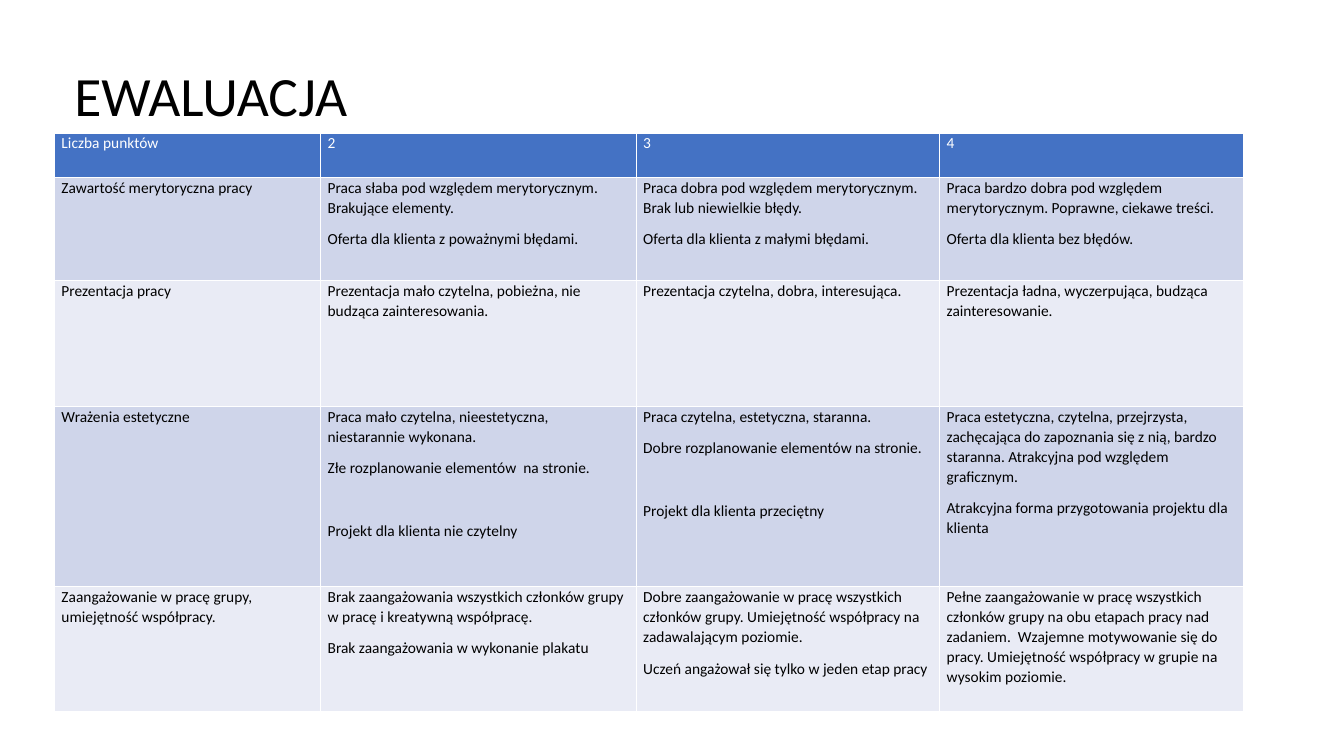
from lxml.etree import SubElement
from pptx import Presentation
from pptx.dml.color import RGBColor
from pptx.enum.text import MSO_ANCHOR
from pptx.oxml.ns import qn
from pptx.util import Inches, Pt

COLORS = {
    "header": "4472C4",
    "odd": "CFD5EA",
    "even": "E9EBF5",
    "border": "FFFFFF",
    "light": "FFFFFF",
    "dark": "000000",
}
FONT = "Calibri"
COLUMN_WIDTHS = [2.64, 3.13, 3.01, 3.01]
ROW_HEIGHTS = [0.44, 1.02, 1.25, 1.79, 1.24]
CRITERIA = [
    [["Liczba punktów"], ["2"], ["3"], ["4"]],
    [
        ["Zawartość merytoryczna pracy"],
        ["Praca słaba pod względem merytorycznym. Brakujące elementy.",
         "Oferta dla klienta z poważnymi błędami."],
        ["Praca dobra pod względem merytorycznym. Brak lub niewielkie błędy.",
         "Oferta dla klienta z małymi błędami."],
        ["Praca bardzo dobra pod względem merytorycznym. Poprawne, ciekawe treści.",
         "Oferta dla klienta bez błędów."],
    ],
    [
        ["Prezentacja pracy"],
        ["Prezentacja mało czytelna, pobieżna, nie budząca zainteresowania."],
        ["Prezentacja czytelna, dobra, interesująca."],
        ["Prezentacja ładna, wyczerpująca, budząca zainteresowanie."],
    ],
    [
        ["Wrażenia estetyczne"],
        ["Praca mało czytelna, nieestetyczna, niestarannie wykonana.",
         "Złe rozplanowanie elementów  na stronie.",
         "Projekt dla klienta nie czytelny"],
        ["Praca czytelna, estetyczna, staranna.",
         "Dobre rozplanowanie elementów na stronie.",
         "Projekt dla klienta przeciętny"],
        ["Praca estetyczna, czytelna, przejrzysta, zachęcająca do zapoznania się z nią, "
         "bardzo staranna. Atrakcyjna pod względem graficznym.",
         "Atrakcyjna forma przygotowania projektu dla klienta"],
    ],
    [
        ["Zaangażowanie w pracę grupy, umiejętność współpracy."],
        ["Brak zaangażowania wszystkich członków grupy w pracę i kreatywną współpracę.",
         "Brak zaangażowania w wykonanie plakatu"],
        ["Dobre zaangażowanie w pracę wszystkich członków grupy. "
         "Umiejętność współpracy na zadawalającym poziomie.",
         "Uczeń angażował się tylko w jeden etap pracy"],
        ["Pełne zaangażowanie w pracę wszystkich członków grupy na obu etapach pracy "
         "nad zadaniem.  Wzajemne motywowanie się do pracy. "
         "Umiejętność współpracy w grupie na wysokim poziomie."],
    ],
]


def add_run(p, text, size, color):
    r = p.add_run()
    r.text = text
    r.font.name = FONT
    r.font.size = Pt(size)
    r.font.color.rgb = RGBColor.from_string(COLORS[color])


def add_title(s, text):
    sp = s.shapes.add_textbox(Inches(0.64), Inches(0.77), Inches(12.06), Inches(0.42))
    tf = sp.text_frame
    tf.word_wrap = True
    tf.vertical_anchor = MSO_ANCHOR.MIDDLE
    p = tf.paragraphs[0]
    p.line_spacing = 0.9
    add_run(p, text, 39.6, "dark")


def set_borders(cell):
    tc_pr = cell._tc.get_or_add_tcPr()
    for position, tag in enumerate(("a:lnL", "a:lnR", "a:lnT", "a:lnB")):
        ln = SubElement(tc_pr, qn(tag), w=str(Pt(1)))
        fill = SubElement(ln, qn("a:solidFill"))
        SubElement(fill, qn("a:srgbClr"), val=COLORS["border"])
        tc_pr.insert(position, ln)


def fill_cell(cell, paragraphs, fill, color):
    cell.fill.solid()
    cell.fill.fore_color.rgb = RGBColor.from_string(COLORS[fill])
    cell.margin_left = cell.margin_right = Inches(0.07)
    cell.margin_top = cell.margin_bottom = 0
    set_borders(cell)
    tf = cell.text_frame
    for i, text in enumerate(paragraphs):
        p = tf.add_paragraph() if i else tf.paragraphs[0]
        p.line_spacing = 1.06
        p.space_after = Pt(8)
        if i == 2:
            p.space_before = Pt(22.5)
        add_run(p, text, 11, color)


def add_criteria_table(s):
    table = s.shapes.add_table(
        len(ROW_HEIGHTS), len(COLUMN_WIDTHS), Inches(0.54), Inches(1.32),
        Inches(sum(COLUMN_WIDTHS)), Inches(sum(ROW_HEIGHTS)),
    ).table
    for column, width in zip(table.columns, COLUMN_WIDTHS):
        column.width = Inches(width)
    for i, (row, height, cells) in enumerate(zip(table.rows, ROW_HEIGHTS, CRITERIA)):
        row.height = Inches(height)
        fill = "header" if i == 0 else "odd" if i % 2 else "even"
        color = "dark" if i else "light"
        for cell, paragraphs in zip(row.cells, cells):
            fill_cell(cell, paragraphs, fill, color)


def main():
    prs = Presentation()
    prs.slide_width = Inches(13.33)
    prs.slide_height = Inches(7.5)
    s = prs.slides.add_slide(prs.slide_layouts[6])
    add_title(s, "EWALUACJA")
    add_criteria_table(s)
    prs.save("out.pptx")


if __name__ == "__main__":
    main()
